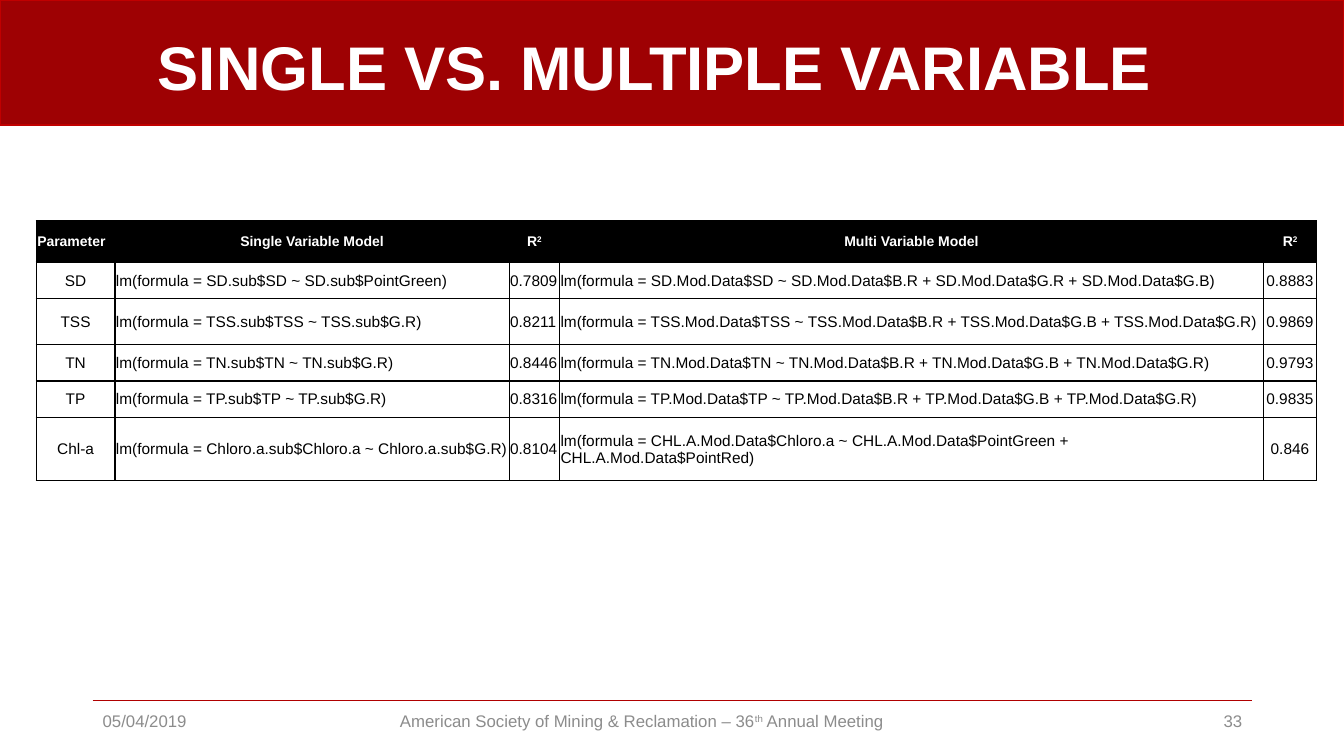
from dataclasses import dataclass

import lxml.etree
import pptx
import pptx.dml.color
import pptx.enum.shapes
import pptx.enum.text
import pptx.oxml.ns
import pptx.util

Inches = pptx.util.Inches
Align = pptx.enum.text.PP_ALIGN
Anchor = pptx.enum.text.MSO_ANCHOR
qn = pptx.oxml.ns.qn

COLORS = {
    "band": "9E0103",
    "edge": "C00000",
    "rule": "B00000",
    "white": "FFFFFF",
    "black": "000000",
    "gray": "8C8C8C",
}


@dataclass
class Style:
    size: int
    color: str
    bold: bool = False


@dataclass
class Footer:
    text: str
    left: float
    width: float
    align: Align


@dataclass
class Column:
    width: float
    head: Align
    body: Align


TITLE = Style(44, "white", True)
HEAD = Style(10, "white", True)
BODY = Style(11, "black")
FOOT = Style(12, "gray")

FOOTERS = [
    Footer("05/04/2019", 0.92, 3, Align.LEFT),
    Footer("American Society of Mining & Reclamation – 36^th^ Annual Meeting",
           3.81, 5.11, Align.CENTER),
    Footer("33", 9.42, 3, Align.RIGHT),
]

COLUMNS = [
    Column(0.78, Align.LEFT, Align.CENTER),
    Column(3.91, Align.CENTER, Align.LEFT),
    Column(0.5, Align.CENTER, Align.LEFT),
    Column(6.98, Align.CENTER, Align.LEFT),
    Column(0.53, Align.CENTER, Align.CENTER),
]
HEIGHTS = [0.41, 0.36, 0.46, 0.36, 0.36, 0.63]

ROWS = [
    ("Parameter", "Single Variable Model", "R^2", "Multi Variable Model", "R^2"),
    ("SD", "lm(formula = SD.sub$SD ~ SD.sub$PointGreen)", "0.7809",
     "lm(formula = SD.Mod.Data$SD ~ SD.Mod.Data$B.R + SD.Mod.Data$G.R + SD.Mod.Data$G.B)",
     "0.8883"),
    ("TSS", "lm(formula = TSS.sub$TSS ~ TSS.sub$G.R)", "0.8211",
     "lm(formula = TSS.Mod.Data$TSS ~ TSS.Mod.Data$B.R + TSS.Mod.Data$G.B + TSS.Mod.Data$G.R)",
     "0.9869"),
    ("TN", "lm(formula = TN.sub$TN ~ TN.sub$G.R)", "0.8446",
     "lm(formula = TN.Mod.Data$TN ~ TN.Mod.Data$B.R + TN.Mod.Data$G.B + TN.Mod.Data$G.R)",
     "0.9793"),
    ("TP", "lm(formula = TP.sub$TP ~ TP.sub$G.R)", "0.8316",
     "lm(formula = TP.Mod.Data$TP ~ TP.Mod.Data$B.R + TP.Mod.Data$G.B + TP.Mod.Data$G.R)",
     "0.9835"),
    ("Chl-a", "lm(formula = Chloro.a.sub$Chloro.a ~ Chloro.a.sub$G.R)", "0.8104",
     "lm(formula = CHL.A.Mod.Data$Chloro.a ~ CHL.A.Mod.Data$PointGreen + CHL.A.Mod.Data$PointRed)",
     "0.846"),
]


def paint(name: str) -> pptx.dml.color.RGBColor:
    return pptx.dml.color.RGBColor.from_string(COLORS[name])


def write(frame, text: str, style: Style, align: Align) -> None:
    para = frame.paragraphs[0]
    para.alignment = align
    for place, part in enumerate(text.split("^")):
        run = para.add_run()
        run.text = part
        run.font.name = "Arial"
        run.font.size = pptx.util.Pt(style.size)
        run.font.bold = style.bold
        run.font.color.rgb = paint(style.color)
        if place % 2:
            run._r.get_or_add_rPr().set("baseline", "30000")


def draw_band(slide) -> None:
    band = slide.shapes.add_shape(
        pptx.enum.shapes.MSO_SHAPE.RECTANGLE, 0, 0, Inches(13.33), Inches(1.24))
    band.shadow.inherit = False
    band.fill.solid()
    band.fill.fore_color.rgb = paint("band")
    band.line.color.rgb = paint("edge")
    band.line.width = pptx.util.Pt(1)


def draw_rule(slide) -> None:
    rule = slide.shapes.add_connector(
        pptx.enum.shapes.MSO_CONNECTOR.STRAIGHT,
        Inches(0.92), Inches(6.95), Inches(12.42), Inches(6.95))
    rule.line.color.rgb = paint("rule")
    rule.line.width = pptx.util.Pt(0.5)
    lxml.etree.SubElement(rule.element.spPr, qn("a:effectLst"))


def draw_title(slide) -> None:
    title = slide.shapes.title
    title.left, title.top = Inches(0.92), Inches(-0.02)
    title.width, title.height = Inches(11.5), Inches(1.45)
    frame = title.text_frame
    frame.auto_size = pptx.enum.text.MSO_AUTO_SIZE.NONE
    frame.word_wrap = True
    frame.vertical_anchor = Anchor.MIDDLE
    frame.margin_right = Inches(0.44)
    write(frame, "SINGLE VS. MULTIPLE VARIABLE", TITLE, Align.CENTER)
    frame.paragraphs[0].line_spacing = 0.9
    title.element.getparent().append(title.element)


def draw_footer(slide, item: Footer) -> None:
    box = slide.shapes.add_textbox(
        Inches(item.left), Inches(6.95), Inches(item.width), Inches(0.4))
    frame = box.text_frame
    frame.word_wrap = True
    frame.vertical_anchor = Anchor.MIDDLE
    write(frame, item.text, FOOT, item.align)


def frame_cell(cell) -> None:
    props = cell._tc.get_or_add_tcPr()
    for place, side in enumerate(("a:lnL", "a:lnR", "a:lnT", "a:lnB")):
        line = lxml.etree.Element(qn(side), w=str(pptx.util.Pt(1)))
        fill = lxml.etree.SubElement(line, qn("a:solidFill"))
        lxml.etree.SubElement(fill, qn("a:srgbClr"), val=COLORS["black"])
        props.insert(place, line)


def draw_table(slide) -> None:
    table = slide.shapes.add_table(
        len(ROWS), len(COLUMNS), Inches(0.36), Inches(2.19),
        Inches(12.7), Inches(sum(HEIGHTS))).table
    table.horz_banding = False
    for slot, column in zip(table.columns, COLUMNS):
        slot.width = Inches(column.width)
    for place, (texts, height) in enumerate(zip(ROWS, HEIGHTS)):
        table.rows[place].height = Inches(height)
        for cell, text, column in zip(table.rows[place].cells, texts, COLUMNS):
            cell.vertical_anchor = Anchor.MIDDLE
            cell.margin_left = cell.margin_right = cell.margin_top = Inches(0.01)
            cell.margin_bottom = 0
            if place == 0:
                cell.fill.solid()
                cell.fill.fore_color.rgb = paint("black")
                write(cell.text_frame, text, HEAD, column.head)
            else:
                cell.fill.background()
                write(cell.text_frame, text, BODY, column.body)
            frame_cell(cell)


def main() -> None:
    deck = pptx.Presentation()
    deck.slide_width, deck.slide_height = Inches(13.33), Inches(7.5)
    slide = deck.slides.add_slide(deck.slide_layouts[5])
    draw_band(slide)
    draw_rule(slide)
    draw_title(slide)
    for item in FOOTERS:
        draw_footer(slide, item)
    draw_table(slide)
    deck.save("out.pptx")


if __name__ == "__main__":
    main()
